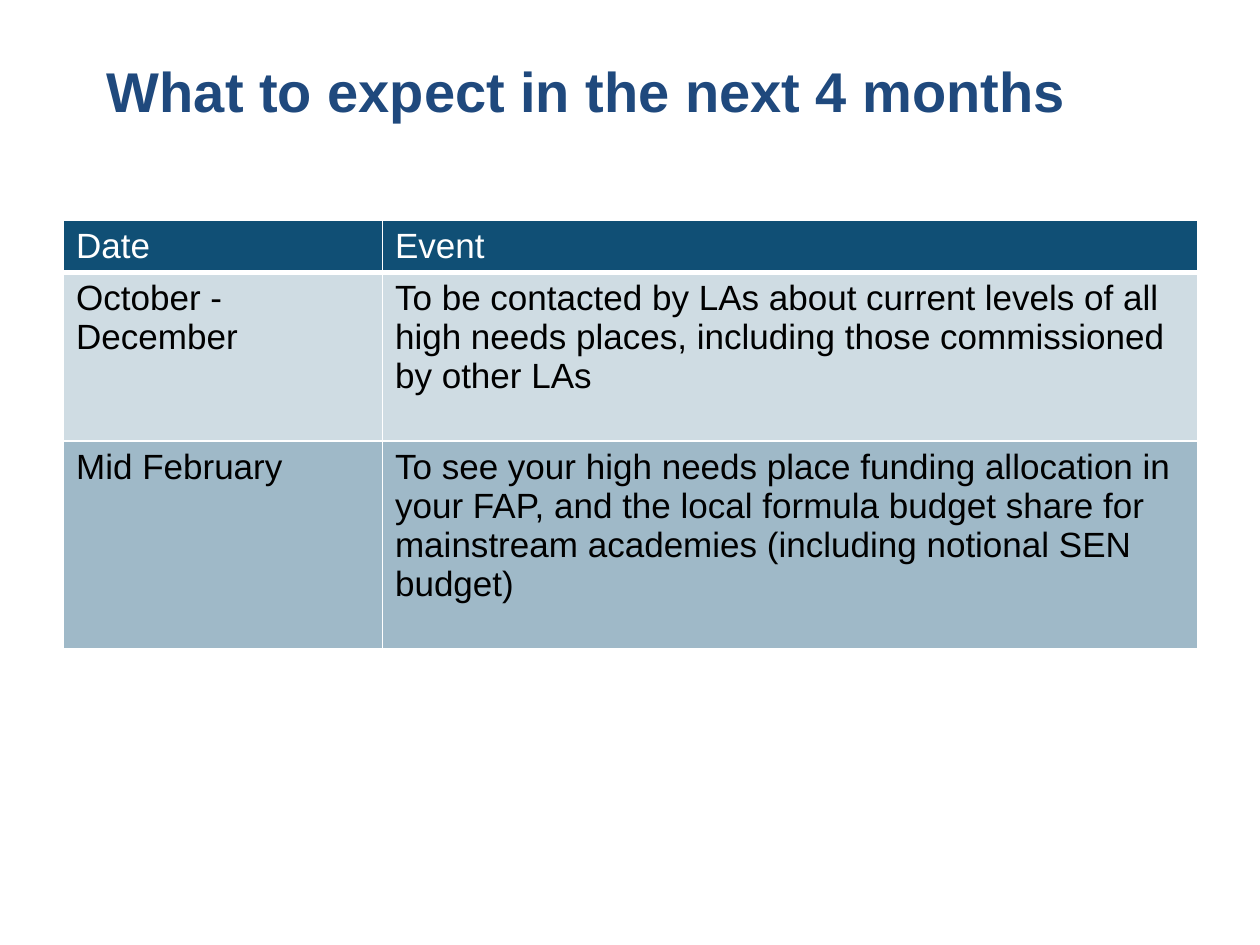
"""Build the slide that lists what to expect in the next four months."""
from pptx import Presentation
from pptx.dml.color import RGBColor
from pptx.enum.text import MSO_ANCHOR as Anchor, PP_ALIGN as Align
from pptx.oxml import parse_xml
from pptx.oxml.ns import nsdecls
from pptx.util import Cm, Pt


def rgb(value):
    return RGBColor.from_string(value)


def write(tf, text, size=20, color="000000", bold=False, font="Arial"):
    p = tf.paragraphs[0]
    p.alignment = Align.LEFT
    r = p.add_run()
    r.text = text
    r.font.name, r.font.size, r.font.bold = font, Pt(size), bold
    r.font.color.rgb = rgb(color)


class Deck:
    TITLE, HEADER, LINE = "1F497D", "104F75", "FFFFFF"
    BANDS = "CFDCE3", "9FB9C8"

    def __init__(self):
        self.prs = Presentation()
        self.prs.slide_width, self.prs.slide_height = Cm(25.4), Cm(19.05)
        self.s = self.prs.slides.add_slide(self.prs.slide_layouts[5])

    def title(self, text, x, y, w, h):
        sp = self.s.shapes.title
        sp.left, sp.top, sp.width, sp.height = Cm(x), Cm(y), Cm(w), Cm(h)
        tf = sp.text_frame
        tf.word_wrap, tf.vertical_anchor = True, Anchor.MIDDLE
        write(tf, text, size=32, color=self.TITLE, bold=True)

    def borders(self, cell, bottom=1):
        tc_pr = cell._tc.get_or_add_tcPr()
        for side, width in zip("LRTB", (1, 1, 1, bottom)):
            tc_pr.append(parse_xml(
                f'<a:ln{side} {nsdecls("a")} w="{Pt(width)}"><a:solidFill>'
                f'<a:srgbClr val="{self.LINE}"/></a:solidFill></a:ln{side}>'))

    def table(self, rows, x, y, widths, heights):
        frame = self.s.shapes.add_table(
            len(rows), len(widths), Cm(x), Cm(y), Cm(sum(widths)), Cm(sum(heights)))
        table = frame.table
        table.horz_banding = False
        for column, width in zip(table.columns, widths):
            column.width = Cm(width)
        for i, (row, height) in enumerate(zip(rows, heights)):
            table.rows[i].height = Cm(height)
            header = i == 0
            for j, text in enumerate(row):
                cell = table.cell(i, j)
                self.borders(cell, bottom=3 if header else 1)
                cell.fill.solid()
                cell.fill.fore_color.rgb = rgb(self.HEADER if header else self.BANDS[(i - 1) % 2])
                write(cell.text_frame, text, color="FFFFFF" if header else "000000")


def main():
    deck = Deck()
    deck.title("What to expect in the next 4 months", 1.9, 0.91, 21.6, 1.8)
    rows = [
        ("Date", "Event"),
        ("October - December",
         "To be contacted by LAs about current levels of all high needs places, "
         "including those commissioned by other LAs"),
        ("Mid February",
         "To see your high needs place funding allocation in your FAP, and the local "
         "formula budget share for mainstream academies (including notional SEN budget)"),
    ]
    deck.table(rows, 1.28, 4.45, widths=(6.43, 16.43), heights=(1.04, 3.4, 4.18))
    deck.prs.save("out.pptx")


if __name__ == "__main__":
    main()
